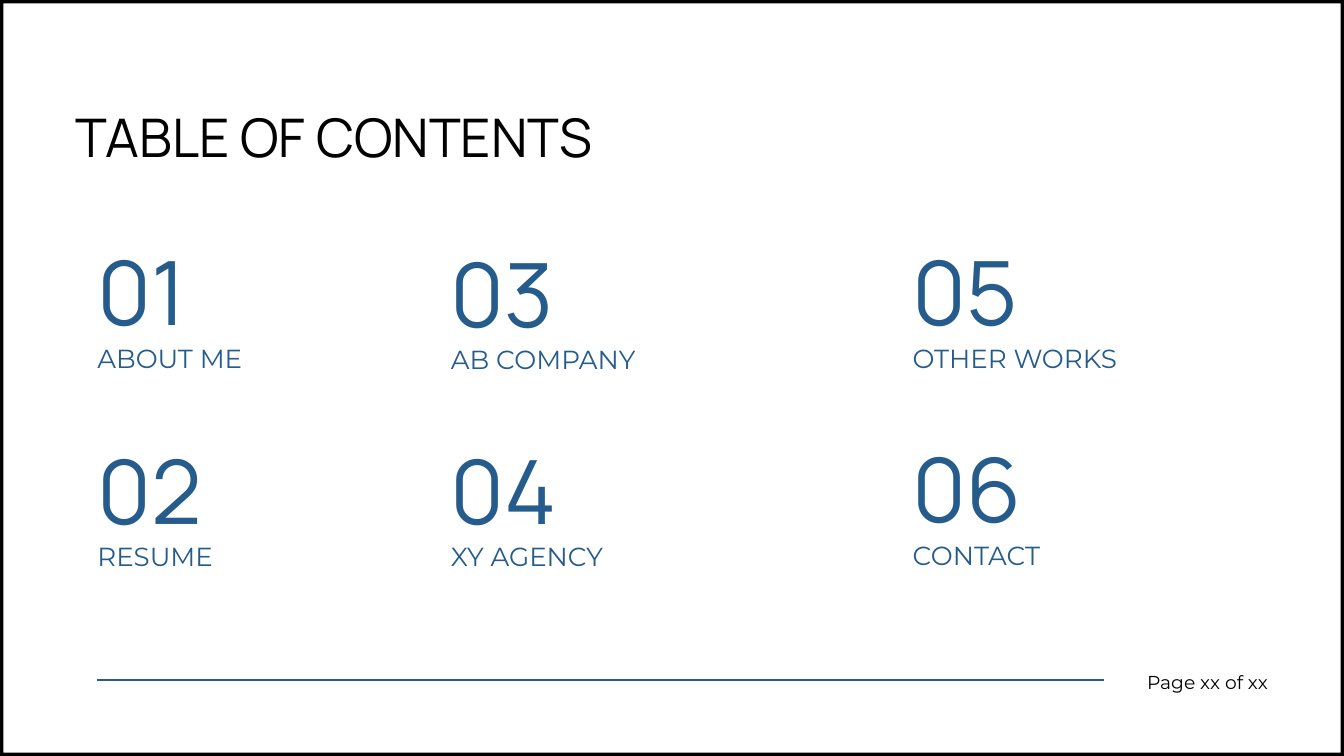
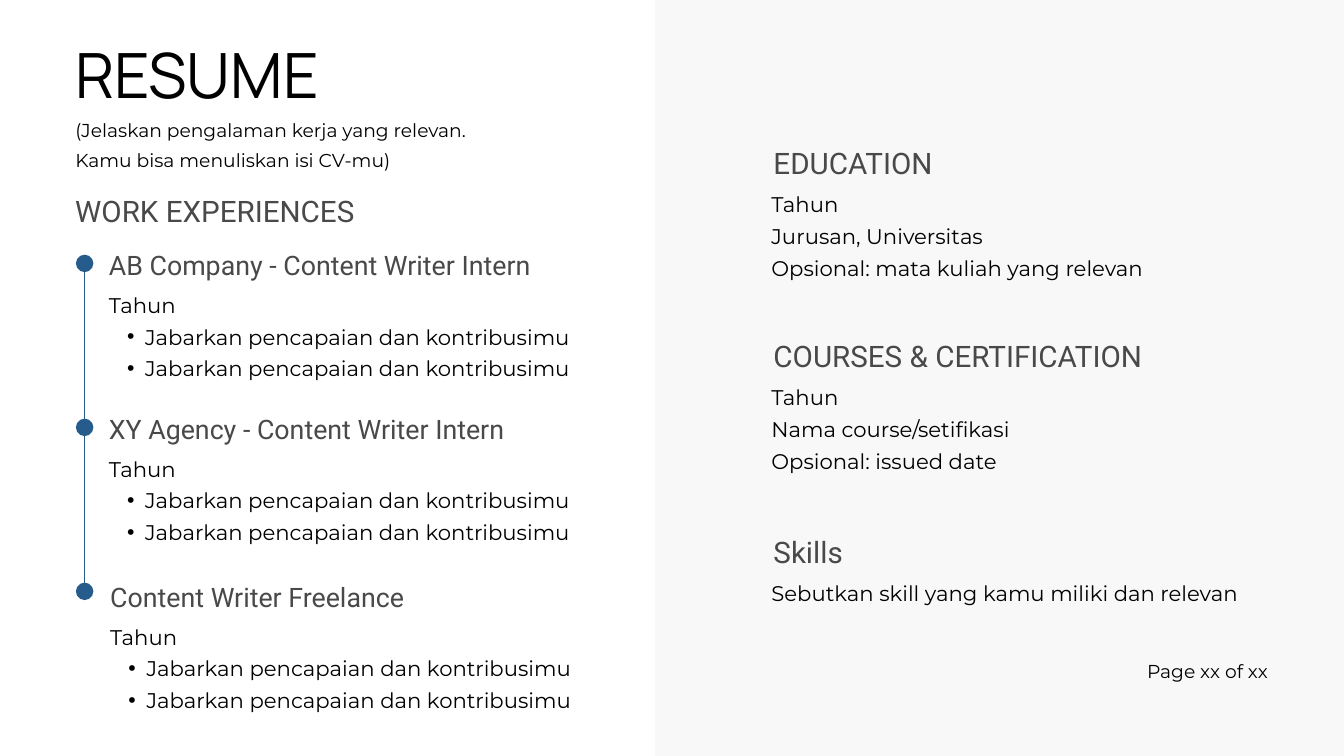
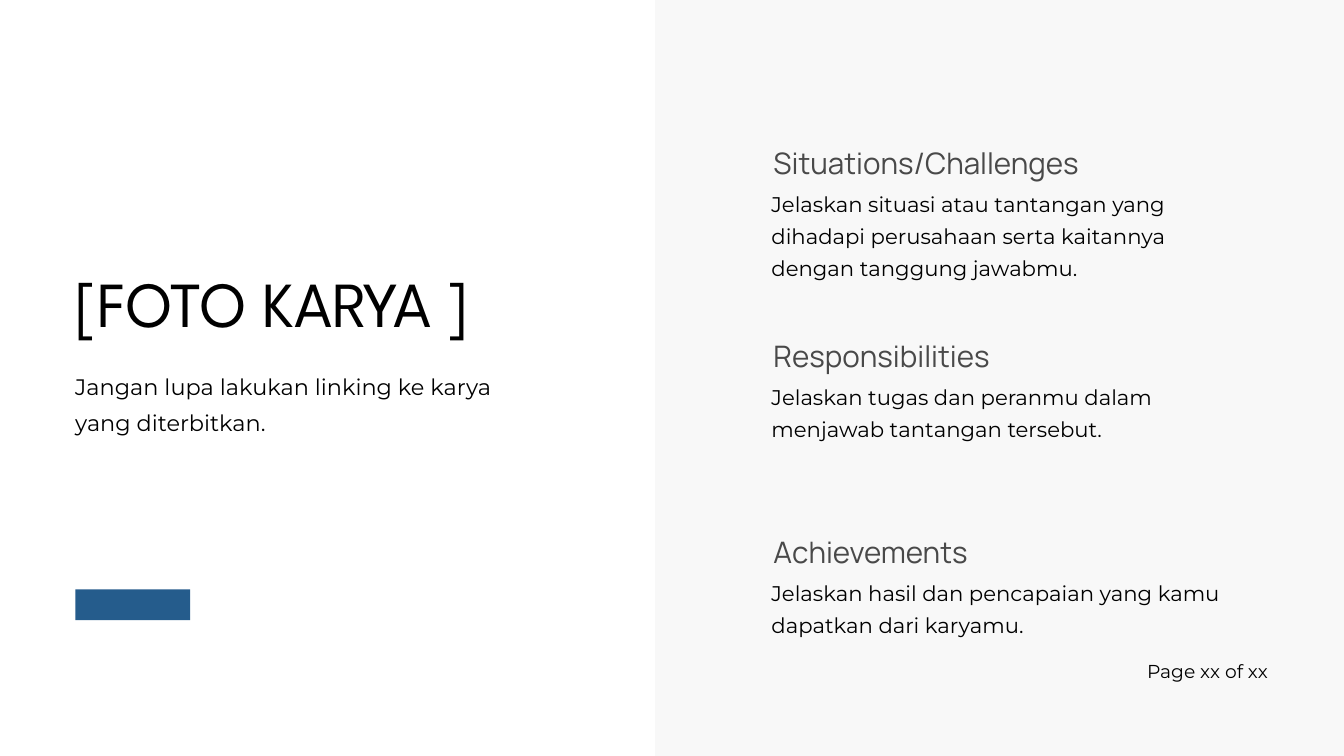
import lxml.etree
import pptx
import pptx.dml.color
import pptx.enum.shapes
import pptx.enum.text
import pptx.oxml.ns
import pptx.util

# Grid of square cells: 20 columns by 11.25 rows
COLS, ROWS = 20, 11.25
CELL = pptx.util.Inches(1)

BLUE, BLACK, GRAY, PALE, WHITE = "255C8C", "000000", "494949", "DDDDDD", "FFFFFF"
SANS, HEAD, ROMAN, SPARTAN = "Montserrat", "Manrope", "Roboto", "League Spartan"
MARGIN = 1.12
PANEL = (9.75, 0, COLS - 9.75, ROWS)
SHAPE = pptx.enum.shapes.MSO_SHAPE
RIGHT = pptx.enum.text.PP_ALIGN.RIGHT

# Text styles
TITLE = dict(font=HEAD, size=57, line=60.4)
BODY = dict(size=22.7, line=34.1)
SECTION = dict(size=31.7, line=47.6, color=GRAY)
JOB = dict(font=ROMAN, size=28.7, line=43.1, color=GRAY)
NUMBER = dict(font=HEAD, size=95, line=114, color=BLUE)
LABEL = dict(size=28, line=33.6, color=BLUE)


def grid(*cells):
    return [round(cell * CELL) for cell in cells]


def rgb(code):
    return pptx.dml.color.RGBColor.from_string(code)


def child(parent, tag, **attrs):
    return lxml.etree.SubElement(parent, pptx.oxml.ns.qn(tag), **attrs)


def text(slide, box, words, font=SANS, size=20, line=28, color=BLACK,
         align=None, bullets=()):
    frame = slide.shapes.add_textbox(*grid(*box)).text_frame
    frame.word_wrap = True
    frame.auto_size = pptx.enum.text.MSO_AUTO_SIZE.SHAPE_TO_FIT_TEXT
    frame.margin_left = frame.margin_right = 0
    frame.margin_top = frame.margin_bottom = 0
    plain = words.split("\n")
    for index, part in enumerate([*plain, *bullets]):
        para = frame.add_paragraph() if index else frame.paragraphs[0]
        para.line_spacing = pptx.util.Pt(line)
        para.alignment = align
        if index >= len(plain):
            bullet(para)
        run = para.add_run()
        run.text = part
        run.font.name = font
        run.font.size = pptx.util.Pt(size)
        run.font.color.rgb = rgb(color)


def bullet(para):
    para.level = 1
    props = para._p.get_or_add_pPr()
    left, hang = grid(0.54, -0.27)
    props.set("marL", str(left))
    props.set("indent", str(hang))
    child(props, "a:buFont", typeface="Arial")
    child(props, "a:buChar", char="•")


def block(slide, kind, box, color, alpha=None):
    shape = slide.shapes.add_shape(kind, *grid(*box))
    shape.shadow.inherit = False
    shape.fill.solid()
    shape.fill.fore_color.rgb = rgb(color)
    shape.line.fill.background()
    if alpha is not None:
        fill = shape._element.spPr.find(".//" + pptx.oxml.ns.qn("a:srgbClr"))
        child(fill, "a:alpha", val=str(alpha * 1000))
    return shape


def rule(slide, start, end):
    line = slide.shapes.add_connector(
        pptx.enum.shapes.MSO_CONNECTOR.STRAIGHT, *grid(*start, *end))
    line.line.color.rgb = rgb(BLUE)
    line.line.width = pptx.util.Pt(1.5)
    child(line._element.spPr, "a:effectLst")
    return line


def blank(deck):
    slide = deck.slides.add_slide(deck.slide_layouts[6])
    slide.background.fill.solid()
    slide.background.fill.fore_color.rgb = rgb(WHITE)
    return slide


def footer(slide, top=9.76):
    text(slide, (16.7, top, 2.17, 0.36), "Page xx of xx", align=RIGHT)


def panel(slide, box, font, parts):
    """Pale side panel with three headed sections."""
    block(slide, SHAPE.RECTANGLE, box, PALE, alpha=18)
    left, top = box[:2]
    spots = ((2.02, 6.76), (4.9, 7.09), (7.81, 7.4))
    for (down, width), (head, body) in zip(spots, parts):
        text(slide, (left + 1.76, top + down, 6.51, 0.62), head, font=font, **SECTION)
        text(slide, (left + 1.73, top + down + 0.73, width, 1.39), body, **BODY)


def entry(slide, left, top, number, label):
    text(slide, (left, top, 3, 1.56), number, **NUMBER)
    text(slide, (left, top + 1.56, 4.5, 0.45), label, **LABEL)


def job(slide, left, top, role):
    text(slide, (left, top, 8.38, 0.58), role, **JOB)
    text(slide, (left, top + 0.67, 7.68, 1.39), "Tahun",
         bullets=["Jabarkan pencapaian dan kontribusimu"] * 2, **BODY)


def track(slide, left, top, step, count, size=0.26):
    """Vertical line with evenly spaced dots."""
    mid = left + size / 2
    line = rule(slide, (mid, top + size / 2), (mid, top + step * (count - 1)))
    for index in range(count):
        dot = block(slide, SHAPE.OVAL, (left, top + step * index, size, size), BLUE)
    line.end_connect(dot, 0)


def contents(deck):
    slide = blank(deck)
    border = block(slide, SHAPE.FRAME, (0, 0, COLS, ROWS), BLACK)
    border.adjustments[0] = 0.05 / ROWS
    rule(slide, (1.45, 10.12), (16.43, 10.12))
    footer(slide, 9.93)
    text(slide, (MARGIN, 1.67, 12.19, 0.93), "TABLE OF CONTENTS", **TITLE)
    columns = (
        (1.45, (3.53, 6.48), ("ABOUT ME", "RESUME")),
        (6.71, (3.55, 6.48), ("AB COMPANY", "XY AGENCY")),
        (13.58, (3.53, 6.46), ("OTHER WORKS", "CONTACT")),
    )
    count = 0
    for left, tops, labels in columns:
        for top, label in zip(tops, labels):
            count += 1
            entry(slide, left, top, f"{count:02}", label)


def resume(deck):
    slide = blank(deck)
    panel(slide, PANEL, ROMAN, (
        ("EDUCATION", "Tahun\nJurusan, Universitas\nOpsional: mata kuliah yang relevan"),
        ("COURSES & CERTIFICATION", "Tahun\nNama course/setifikasi\nOpsional: issued date"),
        ("Skills", "Sebutkan skill yang kamu miliki dan relevan"),
    ))
    footer(slide)
    # Heading and intro
    text(slide, (MARGIN, 0.73, 8.17, 0.97), "RESUME", **{**TITLE, "size": 66.8, "line": 66.8})
    text(slide, (MARGIN, 1.66, 6.21, 0.84),
         "(Jelaskan pengalaman kerja yang relevan. Kamu bisa menuliskan isi CV-mu)", line=32)
    # Work timeline
    text(slide, (MARGIN, 2.74, 6.46, 0.67), "WORK EXPERIENCES", font=ROMAN, **SECTION)
    track(slide, 1.13, 3.79, 2.44, 3)
    job(slide, 1.62, 3.58, "AB Company - Content Writer Intern")
    job(slide, 1.62, 6.02, "XY Agency - Content Writer Intern")
    job(slide, 1.64, 8.52, "Content Writer Freelance")


def work(deck):
    slide = blank(deck)
    panel(slide, PANEL, HEAD, (
        ("Situations/Challenges", "Jelaskan situasi atau tantangan yang dihadapi "
         "perusahaan serta kaitannya dengan tanggung jawabmu."),
        ("Responsibilities", "Jelaskan tugas dan peranmu dalam menjawab tantangan tersebut."),
        ("Achievements", "Jelaskan hasil dan pencapaian yang kamu dapatkan dari karyamu."),
    ))
    footer(slide)
    block(slide, SHAPE.RECTANGLE, (MARGIN, 8.77, 1.71, 0.46), BLUE)
    text(slide, (MARGIN, 4.11, 8.17, 0.99), "[FOTO KARYA ]",
         font=SPARTAN, size=68.8, line=68.8)
    text(slide, (MARGIN, 5.42, 7.04, 1.02),
         "Jangan lupa lakukan linking ke karya yang diterbitkan.", size=24, line=38.4)


def main():
    deck = pptx.Presentation()
    deck.slide_width, deck.slide_height = grid(COLS, ROWS)
    for build in (contents, resume, work):
        build(deck)
    deck.save("out.pptx")


if __name__ == "__main__":
    main()
